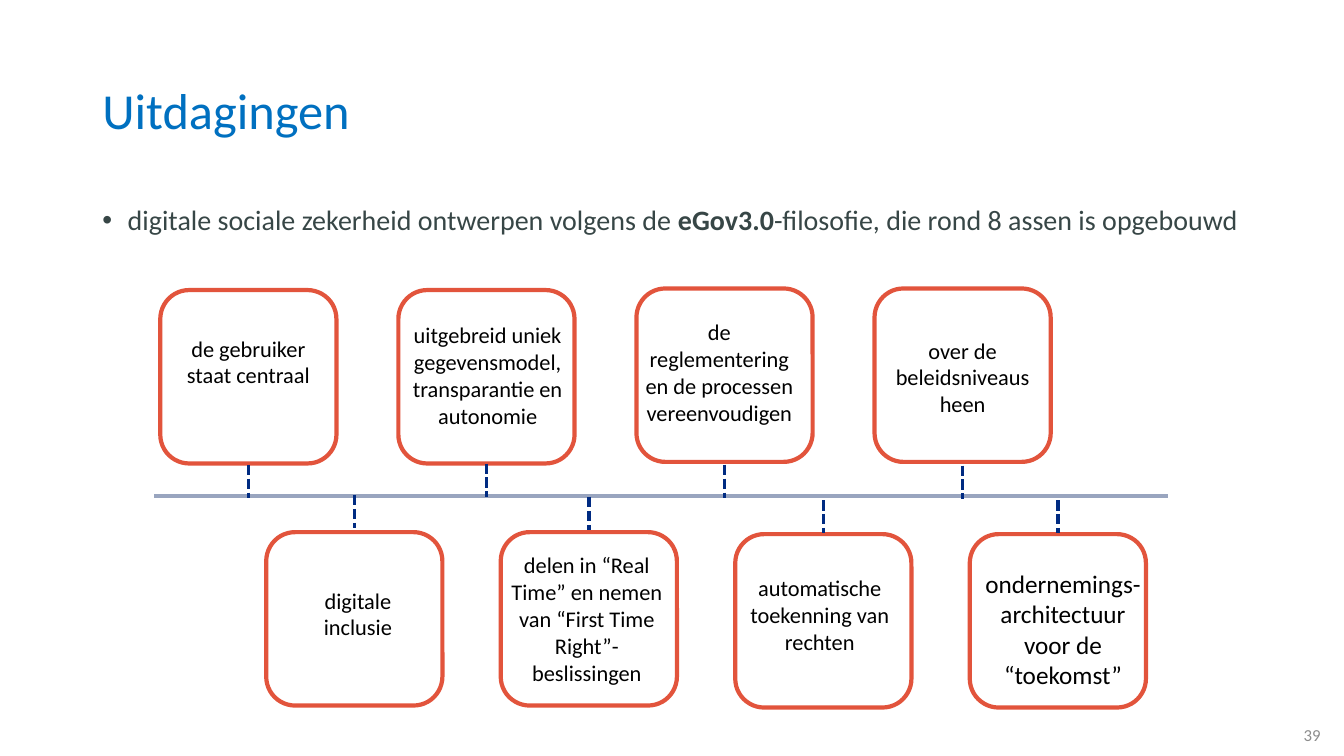
from lxml import etree
from pptx import Presentation
from pptx.dml.color import RGBColor
from pptx.enum.dml import MSO_LINE
from pptx.enum.shapes import MSO_CONNECTOR, MSO_SHAPE
from pptx.enum.text import MSO_ANCHOR, PP_ALIGN
from pptx.oxml.ns import qn
from pptx.util import Cm, Pt

DASH = MSO_LINE.SQUARE_DOT
RECT, ROUNDED = MSO_SHAPE.RECTANGLE, MSO_SHAPE.ROUNDED_RECTANGLE
STRAIGHT = MSO_CONNECTOR.STRAIGHT
TOP, MIDDLE = MSO_ANCHOR.TOP, MSO_ANCHOR.MIDDLE
LEFT, CENTER, RIGHT = PP_ALIGN.LEFT, PP_ALIGN.CENTER, PP_ALIGN.RIGHT

FONT = "Calibri"
BLUE, GREY_GREEN, BLACK, GREY = "0070C0", "374646", "000000", "8C8C8C"
NAVY, TICK_BLUE, RED, WHITE = "002060", "002B82", "E2543C", "FFFFFF"

TITLE = "Uitdagingen"
INTRO = [
    ("digitale sociale zekerheid ontwerpen volgens de ", False),
    ("eGov3.0", True),
    ("-filosofie, die rond 8 assen is opgebouwd", False),
]
PAGE = "39"

# Lengths in cm: label, size in pt, number of lines, box top, tick top,
# label top, label width, label shift from the box centre
ABOVE = [
    ("de gebruiker staat centraal", 16, 2, 7.31, 11.71, 8.31, 3.71, 0),
    ("uitgebreid uniek gegevensmodel, transparantie en autonomie",
     16, 4, 7.31, 11.68, 7.98, 4.44, 0.03),
    ("de reglementering en de processen vereenvoudigen",
     16, 4, 7.27, 11.71, 7.9, 4.44, -0.13),
    ("over de beleidsniveaus heen", 16, 3, 7.27, 11.73, 8.36, 4.01, 0),
]
BELOW = [
    ("digitale inclusie", 16, 2, 13.41, 12.47, 14.66, 3.71, 0.09),
    ("delen in “Real Time” en nemen van “First Time Right”-beslissingen",
     16, 5, 13.41, 12.52, 13.77, 4.44, -0.05),
    ("automatische toekenning van rechten",
     16, 3, 13.46, 12.6, 14.35, 4.27, -0.09),
    ("ondernemings-architectuur voor de “toekomst”",
     18, 4, 13.46, 12.6, 14.2, 4.44, 0.13),
]
# First box left, distance between boxes, axes
ROWS = [(4.04, 6.0, ABOVE), (6.71, 5.91, BELOW)]
BOX_WIDTH, BOX_HEIGHT, TICK_LENGTH = 4.44, 4.37, 0.84


def rgb(value):
    return RGBColor.from_string(value)


def add_text(slide, area, runs, size, color, align=LEFT, anchor=TOP):
    """Add a one-paragraph text box from (text, bold) runs; return the paragraph."""
    frame = slide.shapes.add_textbox(*map(Cm, area)).text_frame
    frame.word_wrap = True
    frame.vertical_anchor = anchor
    paragraph = frame.paragraphs[0]
    paragraph.alignment = align
    for text, bold in runs:
        run = paragraph.add_run()
        run.text = text
        run.font.name, run.font.size, run.font.bold = FONT, Pt(size), bold
        run.font.color.rgb = rgb(color)
    return paragraph


def add_bullet(paragraph, indent):
    properties = paragraph._p.get_or_add_pPr()
    properties.set("marL", str(Cm(indent)))
    properties.set("indent", str(-Cm(indent)))
    etree.SubElement(properties, qn("a:buFont")).set("typeface", "Arial")
    etree.SubElement(properties, qn("a:buChar")).set("char", "•")


def add_timeline(slide):
    timeline = slide.shapes.add_shape(RECT, Cm(3.86), Cm(12.42), Cm(25.6), Cm(0.15))
    timeline.shadow.inherit = False
    timeline.fill.solid()
    timeline.fill.fore_color.rgb = rgb(NAVY)
    navy = timeline.fill._xPr.find(".//" + qn("a:srgbClr"))
    etree.SubElement(navy, qn("a:alpha")).set("val", "40000")
    timeline.line.color.rgb = rgb(WHITE)
    timeline.line.width = Pt(1)


def add_axis(slide, left, axis):
    """Add one box with its label and its tick to the timeline."""
    label, size, lines, box_top, tick_top, label_top, label_width, shift = axis
    box = slide.shapes.add_shape(
        ROUNDED, Cm(left), Cm(box_top), Cm(BOX_WIDTH), Cm(BOX_HEIGHT))
    box.shadow.inherit = False
    box.fill.background()
    box.line.color.rgb = rgb(RED)
    box.line.width = Pt(3)

    center = left + BOX_WIDTH / 2
    label_left = center + shift - label_width / 2
    label_height = 0.25 + lines * size * 0.043
    add_text(slide, (label_left, label_top, label_width, label_height),
             [(label, False)], size, BLACK, CENTER)

    tick = slide.shapes.add_connector(
        STRAIGHT, Cm(center), Cm(tick_top), Cm(center), Cm(tick_top + TICK_LENGTH))
    tick.line.color.rgb = rgb(TICK_BLUE)
    tick.line.width = Pt(2.5)
    tick.line.dash_style = DASH
    etree.SubElement(tick._element.spPr, qn("a:effectLst"))


def main():
    presentation = Presentation()
    presentation.slide_width, presentation.slide_height = Cm(33.87), Cm(19.05)
    slide = presentation.slides.add_slide(presentation.slide_layouts[6])

    title = add_text(slide, (2.33, 1.01, 29.21, 3.68), [(TITLE, False)],
                     36, BLUE, anchor=MIDDLE)
    title.line_spacing = 0.9
    intro = add_text(slide, (2.33, 5.07, 29.21, 1.2), INTRO, 20, GREY_GREEN)
    add_bullet(intro, 0.64)
    intro.line_spacing = 0.9

    add_timeline(slide)
    for first_left, pitch, axes in ROWS:
        for column, axis in enumerate(axes):
            add_axis(slide, first_left + column * pitch, axis)

    add_text(slide, (25.91, 18.01, 7.62, 1.01), [(PAGE, False)],
             12, GREY, RIGHT, MIDDLE)
    presentation.save("out.pptx")


if __name__ == "__main__":
    main()
